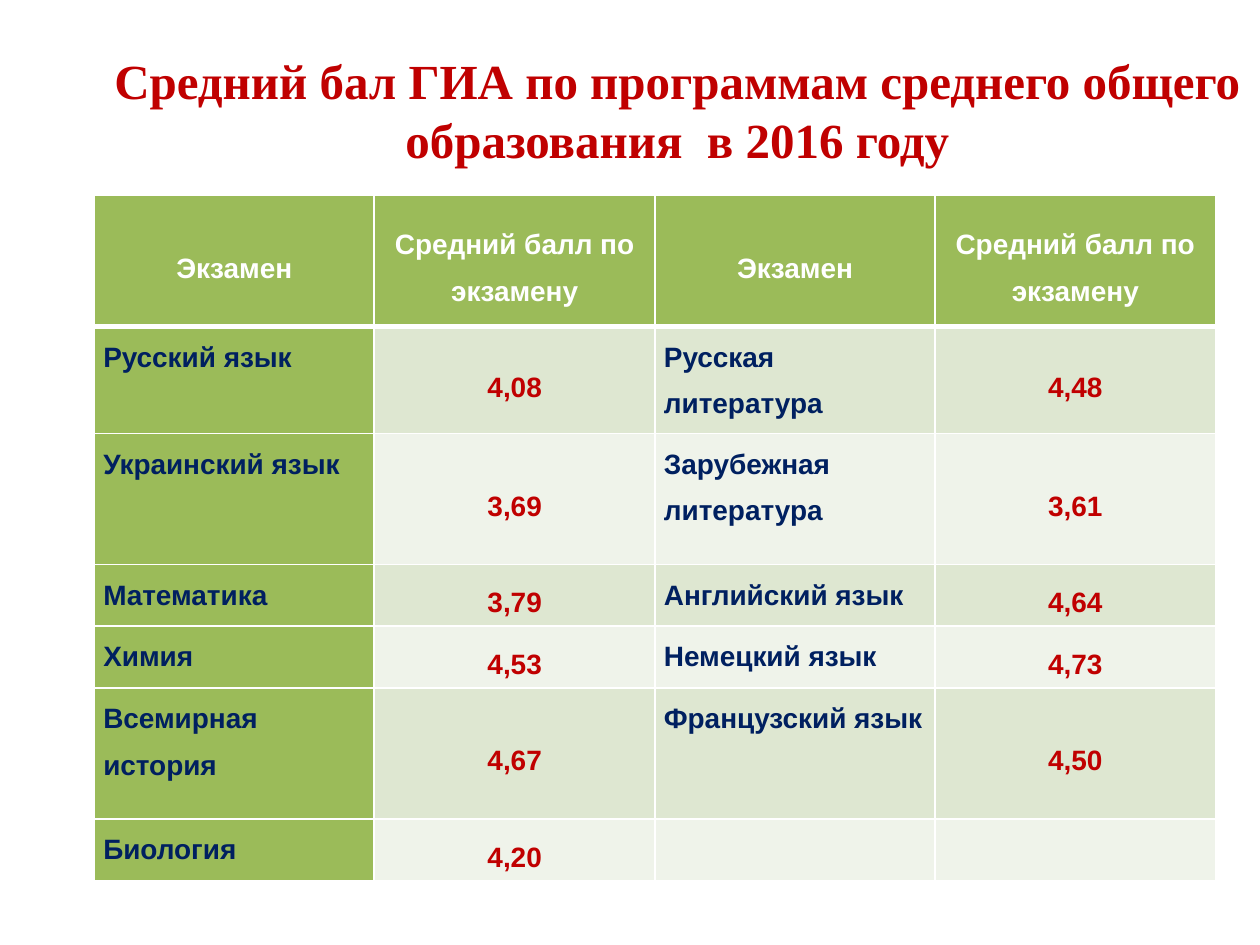
from lxml.etree import SubElement
from pptx import Presentation
from pptx.dml.color import RGBColor
from pptx.enum.text import MSO_ANCHOR, MSO_AUTO_SIZE, PP_ALIGN
from pptx.oxml.ns import qn
from pptx.util import Inches, Pt

TITLE = "Средний бал ГИА по программам среднего общего образования  в 2016 году"
HEADER = ("Экзамен", "Средний балл по экзамену") * 2
RESULTS = [
    ("Русский язык", "4,08", "Русская литература", "4,48"),
    ("Украинский язык", "3,69", "Зарубежная литература", "3,61"),
    ("Математика", "3,79", "Английский язык", "4,64"),
    ("Химия", "4,53", "Немецкий язык", "4,73"),
    ("Всемирная история", "4,67", "Французский язык", "4,50"),
    ("Биология", "4,20", "", ""),
]
COL_WIDTHS = (2.22, 2.23) * 2
ROW_HEIGHTS = (1.04, 0.85, 1.04, 0.49, 0.49, 1.04, 0.49)

THEME = {
    "title_font": "Times New Roman", "title_size": 28,
    "font": "Arial", "size": 16,
    "red": "C00000", "navy": "002060", "white": "FFFFFF",
    "green": "9BBB59", "bands": ("DEE7D1", "EFF3EA"),
}


def put_text(tf, text, *, font, size, color, align, spacing=1.0):
    p = tf.paragraphs[0]
    p.alignment = align
    p.line_spacing = spacing
    r = p.add_run()
    r.text = text
    r.font.name, r.font.size, r.font.bold = font, Pt(size), True
    r.font.color.rgb = RGBColor.from_string(color)


def set_borders(cell, **widths):
    """Draw white borders; widths are points by side (L, R, T, B)."""
    tcPr = cell._tc.get_or_add_tcPr()
    for i, (side, width) in enumerate(widths.items()):
        ln = SubElement(tcPr, qn(f"a:ln{side}"), w=str(Pt(width)))
        fill = SubElement(ln, qn("a:solidFill"))
        SubElement(fill, qn("a:srgbClr"), val=THEME["white"])
        tcPr.insert(i, ln)


def add_title(s):
    sp = s.shapes.title
    sp.left, sp.top = Inches(0.75), Inches(0.21)
    sp.width, sp.height = Inches(9.25), Inches(1.02)
    tf = sp.text_frame
    tf.word_wrap = True
    tf.auto_size = MSO_AUTO_SIZE.NONE
    tf.vertical_anchor = MSO_ANCHOR.MIDDLE
    tf.margin_top, tf.margin_bottom = Inches(0.3), 0
    put_text(tf, TITLE, font=THEME["title_font"], size=THEME["title_size"],
             color=THEME["red"], align=PP_ALIGN.CENTER)


def format_cell(cell, text, row, col):
    is_header, is_score = row == 0, col % 2 == 1
    if is_header or col == 0:
        fill = THEME["green"]
    else:
        fill = THEME["bands"][(row - 1) % 2]
    cell.fill.solid()
    cell.fill.fore_color.rgb = RGBColor.from_string(fill)
    set_borders(cell, L=1, R=1, T=3 if row == 1 else 1, B=3 if is_header else 1)
    cell.margin_left = cell.margin_right = Inches(0.07)
    cell.margin_top = cell.margin_bottom = 0
    centred = is_header or is_score
    cell.vertical_anchor = MSO_ANCHOR.MIDDLE if centred else MSO_ANCHOR.TOP
    if text:
        color = "white" if is_header else "red" if is_score else "navy"
        put_text(cell.text_frame, text, font=THEME["font"], size=THEME["size"],
                 color=THEME[color], spacing=1.5,
                 align=PP_ALIGN.CENTER if centred else PP_ALIGN.LEFT)


def add_results(s):
    rows = [HEADER, *RESULTS]
    table = s.shapes.add_table(
        len(rows), len(HEADER), Inches(0.75), Inches(1.55),
        Inches(sum(COL_WIDTHS)), Inches(sum(ROW_HEIGHTS))).table
    for column, width in zip(table.columns, COL_WIDTHS):
        column.width = Inches(width)
    for i, (texts, height) in enumerate(zip(rows, ROW_HEIGHTS)):
        table.rows[i].height = Inches(height)
        for j, text in enumerate(texts):
            format_cell(table.cell(i, j), text, i, j)


def main():
    prs = Presentation()
    prs.slide_width, prs.slide_height = Inches(10), Inches(7.5)
    s = prs.slides.add_slide(prs.slide_layouts[5])
    add_title(s)
    add_results(s)
    prs.save("out.pptx")


if __name__ == "__main__":
    main()
